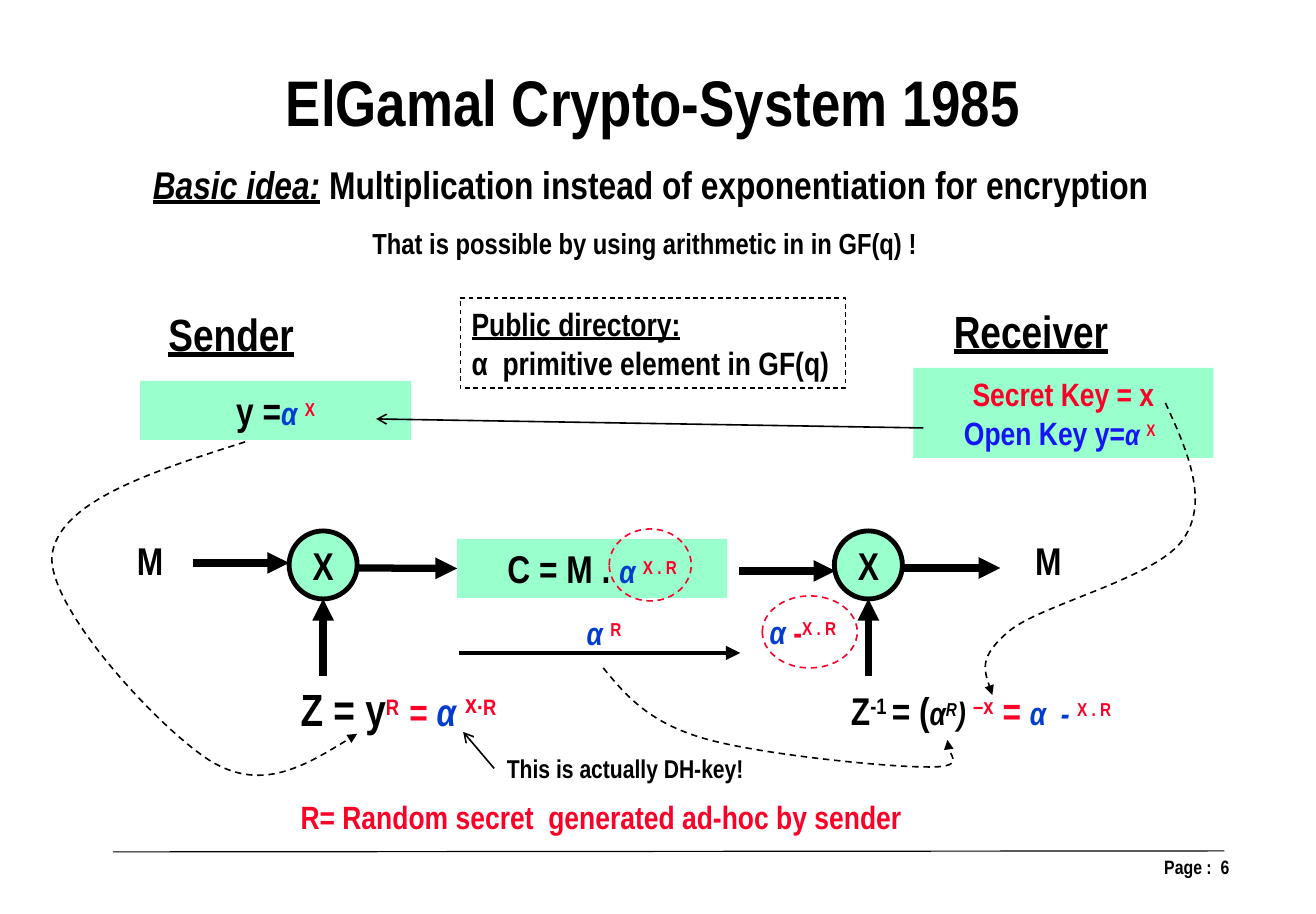
from lxml import etree
from pptx import Presentation
from pptx.dml.color import RGBColor
from pptx.enum.dml import MSO_LINE
from pptx.enum.shapes import MSO_CONNECTOR, MSO_SHAPE
from pptx.enum.text import MSO_ANCHOR, MSO_AUTO_SIZE, PP_ALIGN
from pptx.oxml.ns import qn
from pptx.util import Inches, Pt

WIDE, HIGH = Inches(11.34), Inches(7.88)
PX = Inches(1) / 116
FONT = "Arial Narrow"
DASH = MSO_LINE.DASH
RECT, OVAL = MSO_SHAPE.RECTANGLE, MSO_SHAPE.OVAL
STRAIGHT = MSO_CONNECTOR.STRAIGHT
TOP, MID = MSO_ANCHOR.TOP, MSO_ANCHOR.MIDDLE
FIT, FIXED = MSO_AUTO_SIZE.SHAPE_TO_FIT_TEXT, MSO_AUTO_SIZE.NONE
LEFT, CENTER, RIGHT = PP_ALIGN.LEFT, PP_ALIGN.CENTER, PP_ALIGN.RIGHT
COLORS = {"black": "000000", "red": "FC0128", "blue": "023DD0",
          "key": "1515F5", "mint": "99FFCC"}

# A run is text, size, colour, marks: i italic, u underlined, ^ raised
TITLE = ((274, 56, 757, 89), [("ElGamal Crypto-System 1985", 40, "black", "")])

# Text: box, anchor, alignment, paragraphs of runs
TEXTS = {
    "page": ((944, 848, 299, 60), TOP, RIGHT, [[("Page :  6", 12, "black", "")]]),
    "idea": ((136, 155, 1029, 59), MID, CENTER, [[
        ("Basic idea:", 24, "black", "iu"), (" ", 24, "black", "i"),
        ("Multiplication instead of exponentiation for encryption", 24, "black", "")]]),
    "field": ((358, 219, 573, 48), MID, CENTER, [[
        ("That is possible by using arithmetic in in GF(q) !", 18, "black", "")]]),
    "sender": ((157, 301, 150, 66), TOP, LEFT, [[("Sender", 28, "black", "u")]]),
    "receiver": ((942, 298, 179, 66), TOP, LEFT, [[("Receiver", 28, "black", "u")]]),
    "plain": ((125, 531, 50, 59), MID, CENTER, [[("M", 24, "black", "")]]),
    "decoded": ((1023, 531, 50, 59), MID, CENTER, [[("M", 24, "black", "")]]),
    "sent": ((575, 608, 64, 51), TOP, LEFT, [[
        ("α ", 20, "blue", "i"), ("R", 20, "red", "^")]]),
    "inverse": ((758, 607, 99, 51), TOP, LEFT, [[
        ("α ", 20, "blue", "i"), ("-", 20, "red", ""), ("X . R", 20, "red", "^")]]),
    "mask": ((289, 676, 219, 66), TOP, LEFT, [[
        ("Z = y", 28, "black", ""), ("R  ", 24, "red", "^"), ("= ", 24, "red", ""),
        ("α ", 24, "blue", "i"), ("x", 28, "red", "^"), ("·R", 24, "red", "^")]]),
    "unmask": ((827, 681, 316, 59), MID, CENTER, [[
        ("Z", 24, "black", ""), ("-1 ", 24, "black", "^"), ("= (", 24, "black", ""),
        ("α", 20, "black", "i"), ("R", 20, "black", "i^"), (") ", 20, "black", "i"),
        ("–x", 24, "red", "^"), (" = ", 24, "red", ""),
        ("α  - ", 20, "blue", "i"), ("X . R  ", 20, "red", "^")]]),
    "note": ((494, 747, 262, 43), MID, CENTER, [[
        ("This is actually DH-key!", 16, "black", "")]]),
    "random": ((289, 792, 624, 49), TOP, LEFT, [[
        ("R= Random secret  generated ad-hoc by sender", 20, "red", "")]]),
}

# Shape: box, kind, fill, outline (colour, points, dash), alignment, paragraphs
TIMES = [[("X", 24, "black", "")]]
RING = ("red", 1, DASH)
SHAPES = {
    "encrypt": ((289, 531, 68, 68), OVAL, "mint", ("black", 3, None), CENTER, TIMES),
    "decrypt": ((834, 531, 68, 68), OVAL, "mint", ("black", 3, None), CENTER, TIMES),
    "cipher": ((457, 539, 270, 59), RECT, "mint", None, CENTER, [[
        ("C = M . ", 24, "black", ""), ("α ", 20, "blue", "i"), ("X . R", 20, "red", "^")]]),
    "open": ((140, 381, 271, 59), RECT, "mint", None, CENTER, [[
        ("y =", 24, "black", ""), ("α ", 20, "blue", "i"), ("X", 20, "red", "^")]]),
    "keys": ((913, 368, 300, 90), RECT, "mint", None, CENTER, [
        [("Secret Key = x", 20, "red", "")],
        [("Open Key y=", 20, "key", ""), ("α ", 18, "key", "i"),
         ("X", 18, "red", "^"), (" ", 20, "red", "")]]),
    "public": ((460, 298, 385, 90), RECT, None, ("black", 0.75, DASH), LEFT, [
        [("Public directory:", 20, "black", "u")],
        [("α  primitive element in GF(q)", 20, "black", "")]]),
    "ring": ((609, 529, 82, 72), OVAL, None, RING, CENTER, []),
    "ring2": ((762, 596, 95, 72), OVAL, None, RING, CENTER, []),
}

# Line: from, to, points, head
LINES = {
    "foot": ((113, 852), (1224, 851), 0.75, None),
    "in": ((193, 563), (289, 563), 4.5, "triangle"),
    "out": ((358, 568), (457, 568), 4.5, "triangle"),
    "in2": ((739, 571), (835, 571), 4.5, "triangle"),
    "out2": ((904, 568), (1000, 568), 4.5, "triangle"),
    "up": ((323, 676), (323, 599), 4.5, "triangle"),
    "up2": ((868, 676), (868, 599), 4.5, "triangle"),
    "send": ((459, 653), (740, 653), 3, "triangle"),
    "fetch": ((923, 428), (376, 419), 1, "arrow"),
    "hint": ((494, 768), (463, 732), 1, "arrow"),
}

# Curve: start, then three points for each Bezier part
CURVES = [
    [(245, 442), (151, 472), (58, 502), (52, 556), (48, 609), (162, 732),
     (212, 762), (263, 792), (310, 763), (357, 734)],
    [(1165, 403), (1187, 451), (1209, 501), (1183, 539), (1157, 578), (1042, 604),
     (1009, 631), (978, 657), (985, 675), (992, 695)],
    [(603, 668), (625, 695), (648, 722), (702, 738), (755, 754), (884, 767),
     (925, 767), (965, 768), (943, 745), (947, 740)],
]


def emu(nums):
    return [round(n * PX) for n in nums]


def rgb(name):
    return RGBColor.from_string(COLORS[name])


def write(frame, paras, align, anchor, wrap=False, fit=FIXED):
    frame.word_wrap, frame.auto_size = wrap, fit
    frame.vertical_anchor = anchor
    for i, runs in enumerate(paras):
        para = frame.add_paragraph() if i else frame.paragraphs[0]
        para.alignment = align
        for text, size, color, marks in runs:
            run = para.add_run()
            run.text = text
            font = run.font
            font.name, font.size, font.bold = FONT, Pt(size), True
            font.italic, font.underline = "i" in marks, "u" in marks
            font.color.rgb = rgb(color)
            if "^" in marks:
                run._r.get_or_add_rPr().set("baseline", "30000")


def stroke(line, color, width, dash=None, head=None):
    line.color.rgb, line.width = rgb(color), Pt(width)
    if dash:
        line.dash_style = dash
    if head:
        etree.SubElement(line._get_or_add_ln(), qn("a:tailEnd"), type=head)


def bend(shape):
    """Turn each three line segments into one cubic Bezier."""
    for track in shape._element.iter(qn("a:path")):
        steps = track.findall(qn("a:lnTo"))
        for i in range(0, len(steps), 3):
            curve = etree.SubElement(track, qn("a:cubicBezTo"))
            for step in steps[i:i + 3]:
                curve.append(step[0])
                track.remove(step)


def main():
    deck = Presentation()
    deck.slide_width, deck.slide_height = WIDE, HIGH
    slide = deck.slides.add_slide(deck.slide_layouts[5])
    items = slide.shapes
    made = {}

    title = items.title
    title.left, title.top, title.width, title.height = emu(TITLE[0])
    write(title.text_frame, [TITLE[1]], CENTER, TOP)

    for name, (box, kind, fill, edge, align, paras) in SHAPES.items():
        shape = made[name] = items.add_shape(kind, *emu(box))
        shape.shadow.inherit = False
        if fill:
            shape.fill.solid()
            shape.fill.fore_color.rgb = rgb(fill)
        else:
            shape.fill.background()
        if edge:
            stroke(shape.line, *edge)
        else:
            shape.line.fill.background()
        write(shape.text_frame, paras, align, MID, wrap=edge is None)

    for name, (box, anchor, align, paras) in TEXTS.items():
        made[name] = items.add_textbox(*emu(box))
        page = name == "page"
        write(made[name].text_frame, paras, align, anchor, page, FIXED if page else FIT)
    frame = made["page"].text_frame
    frame.margin_left, frame.margin_right, frame.margin_top = emu((14, 14, 7))

    for name, (start, end, width, head) in LINES.items():
        line = made[name] = items.add_connector(STRAIGHT, *emu(start + end))
        stroke(line.line, "black", width, head=head)
        etree.SubElement(line._element.spPr, qn("a:effectLst"))
    made["out"].end_connect(made["cipher"], 1)
    made["hint"].begin_connect(made["note"], 1)

    for start, *rest in CURVES:
        pen = items.build_freeform(*start, scale=PX)
        pen.add_line_segments(rest, close=False)
        curve = pen.convert_to_shape()
        bend(curve)
        curve.shadow.inherit = False
        curve.fill.background()
        stroke(curve.line, "black", 1, DASH, "triangle")

    deck.save("out.pptx")


if __name__ == "__main__":
    main()
